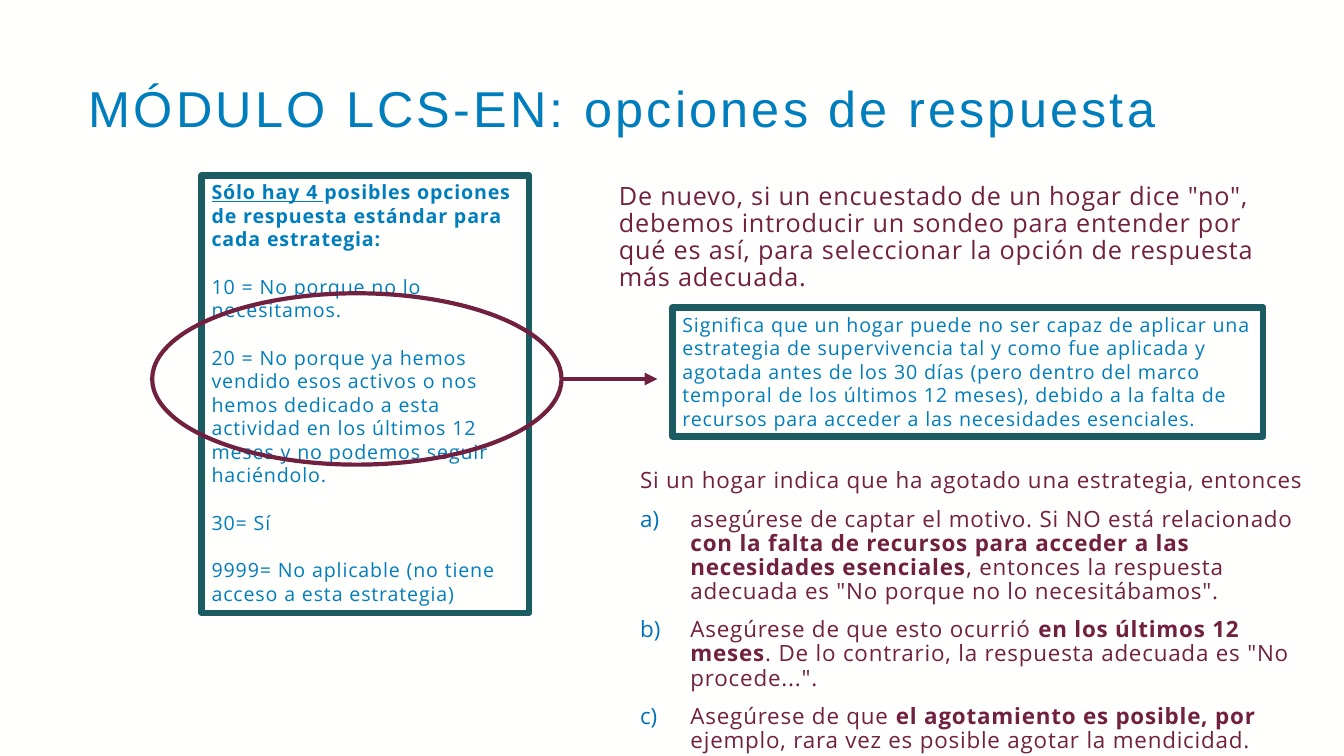
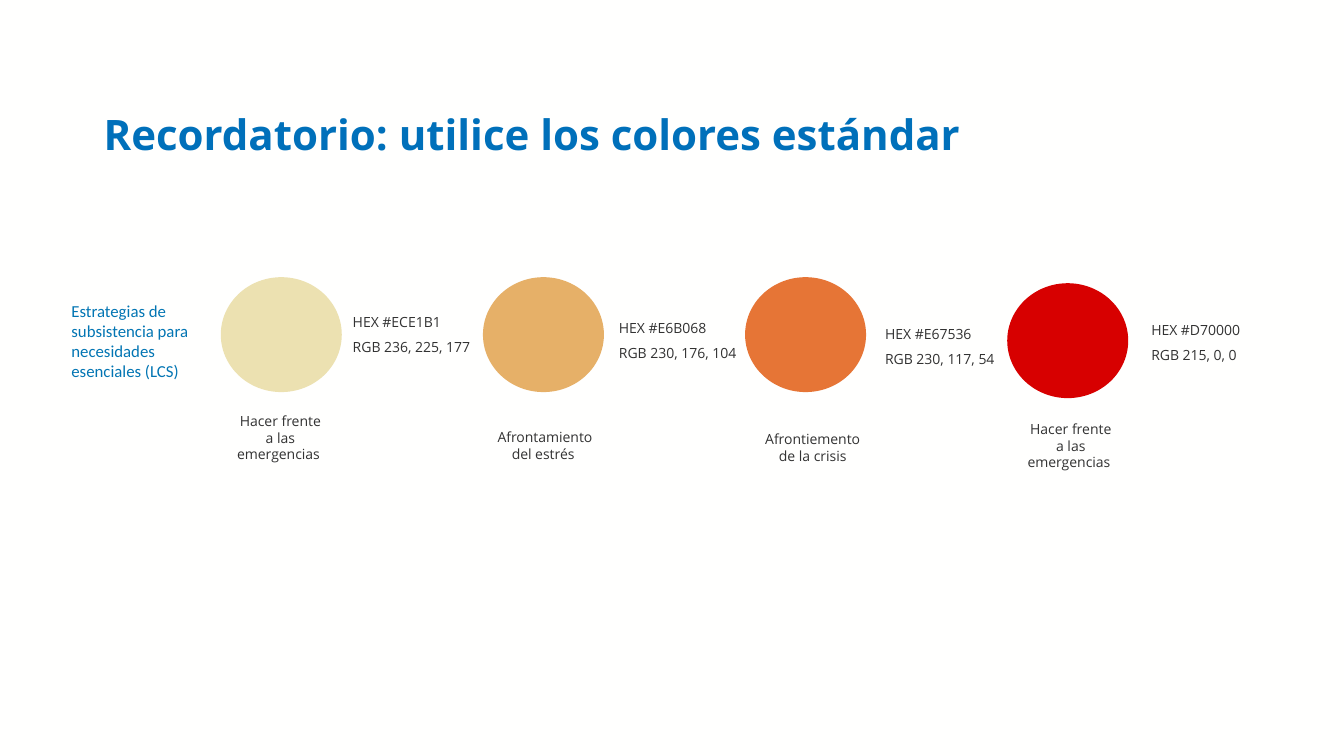
from dataclasses import dataclass, field
from typing import Optional

import lxml.etree
import pptx
import pptx.dml.color
import pptx.enum.shapes
import pptx.enum.text
import pptx.oxml.ns
import pptx.util

Inches = pptx.util.Inches
Pt = pptx.util.Pt
qn = pptx.oxml.ns.qn
ALIGN = pptx.enum.text.PP_ALIGN
ANCHOR = pptx.enum.text.MSO_ANCHOR
SHAPE = pptx.enum.shapes.MSO_SHAPE

BACKGROUND = "FFFFFE"
BLUE = "007DBC"
STRONG_BLUE = "0070BA"
LABEL_BLUE = "0275B3"
TEAL = "1B5B62"
WINE = "722040"
GREY = "323232"
SANS = "Open Sans"


@dataclass(frozen=True)
class Box:
    left: float
    top: float
    width: float
    height: float

    def lengths(self) -> list:
        return [Inches(n) for n in (self.left, self.top, self.width, self.height)]


@dataclass(frozen=True)
class Style:
    """Look of the text in one box; gaps and tracking are in points."""
    size: float
    color: str
    font: str = SANS
    tracking: float = 0
    bold: bool = False
    line_spacing: Optional[float] = None
    before: float = 0
    after: float = 0
    align: ALIGN = ALIGN.LEFT


@dataclass(frozen=True)
class Span:
    text: str
    bold: bool = False
    underline: bool = False


@dataclass(frozen=True)
class Para:
    spans: list = field(default_factory=list)
    lettered: bool = False


@dataclass(frozen=True)
class Swatch:
    """A standard colour with its name and the places of its texts."""
    color: str
    name: str
    circle_top: float
    code_top: float
    name_box: Box


TITLE = Style(36, BLUE, "Arial", tracking=2.3, line_spacing=0.9)
BOLD_TITLE = Style(30, STRONG_BLUE, bold=True, line_spacing=0.9)
OPTIONS = Style(14, BLUE, tracking=0.6, before=17)
INTRODUCTION = Style(18, WINE, tracking=0.6, line_spacing=0.9)
STEPS = Style(16, WINE, tracking=0.6, line_spacing=0.9, before=10)
ROW_LABEL = Style(12, LABEL_BLUE, "Calibri")
CODE = Style(10, GREY, after=6)
NAME = Style(10, GREY, after=6, align=ALIGN.CENTER)

ANSWER_OPTIONS = [
    Para([Span("Sólo hay 4 ", bold=True, underline=True),
          Span("posibles opciones de respuesta estándar para cada estrategia:",
               bold=True)]),
    Para([Span("10 = No porque no lo necesitamos.")]),
    Para([Span("20 = No porque ya hemos vendido esos activos o nos hemos "
               "dedicado a esta actividad en los últimos 12 meses y no "
               "podemos seguir haciéndolo.")]),
    Para([Span("30= Sí")]),
    Para([Span("9999= No aplicable (no tiene acceso a esta estrategia)")]),
]
MEANING = [Para([Span(
    "Significa que un hogar puede no ser capaz de aplicar una estrategia de "
    "supervivencia tal y como fue aplicada y agotada antes de los 30 días "
    "(pero dentro del marco temporal de los últimos 12 meses), debido a la "
    "falta de recursos para acceder a las necesidades esenciales.")])]
PROBING = [Para([Span(
    'De nuevo, si un encuestado de un hogar dice "no", debemos introducir un '
    "sondeo para entender por qué es así, para seleccionar la opción de "
    "respuesta más adecuada.")])]
CHECKS = [
    Para([Span("Si un hogar indica que ha agotado una estrategia, entonces")]),
    Para([Span("asegúrese de captar el motivo. Si NO está relacionado "),
          Span("con la falta de recursos para acceder a las necesidades "
               "esenciales", bold=True),
          Span(', entonces la respuesta adecuada es "No porque no lo '
               'necesitábamos".')], lettered=True),
    Para([Span("Asegúrese de que esto ocurrió "),
          Span("en los últimos 12 meses", bold=True),
          Span('. De lo contrario, la respuesta adecuada es "No procede...".')],
         lettered=True),
    Para([Span("Asegúrese de que "),
          Span("el agotamiento es posible, por ", bold=True),
          Span("ejemplo, rara vez es posible agotar la mendicidad.")],
         lettered=True),
]
SWATCHES = [
    Swatch("ECE1B1", "Hacer frente a las emergencias ", 2.75, 2.69,
           Box(2.24, 3.95, 1.08, 0.78)),
    Swatch("E6B068", "Afrontamiento del estrés ", 2.75, 2.75,
           Box(4.75, 4.03, 1.31, 0.78)),
    Swatch("E67536", "Afrontiemento de la crisis", 2.75, 2.81,
           Box(7.45, 4.05, 1.22, 0.78)),
    Swatch("D70000", "Hacer frente a las emergencias ", 2.81, 2.77,
           Box(10.08, 4.03, 1.08, 0.78)),
]


def rgb(color: str) -> pptx.dml.color.RGBColor:
    return pptx.dml.color.RGBColor.from_string(color)


def add_letter(paragraph) -> None:
    """Number the paragraph a), b), c) with a hanging indent."""
    properties = paragraph._p.get_or_add_pPr()
    indent = Inches(0.5)
    properties.set("marL", str(indent))
    properties.set("indent", str(-indent))
    bullet_color = lxml.etree.SubElement(properties, qn("a:buClr"))
    lxml.etree.SubElement(bullet_color, qn("a:srgbClr"), val=STRONG_BLUE)
    lxml.etree.SubElement(properties, qn("a:buFont"), typeface="+mj-lt")
    lxml.etree.SubElement(properties, qn("a:buAutoNum"), type="alphaLcParenR")


def add_run(paragraph, span: Span, style: Style) -> None:
    run = paragraph.add_run()
    run.text = span.text
    run.font.name = style.font
    run.font.size = Pt(style.size)
    run.font.color.rgb = rgb(style.color)
    run.font.bold = span.bold or style.bold
    run.font.underline = span.underline
    if style.tracking:
        run._r.get_or_add_rPr().set("spc", str(round(style.tracking * 100)))


def write(shape, paragraphs: list[Para], style: Style,
          anchor: ANCHOR = ANCHOR.TOP) -> None:
    frame = shape.text_frame
    frame.word_wrap = True
    frame.vertical_anchor = anchor
    for index, content in enumerate(paragraphs):
        paragraph = frame.add_paragraph() if index else frame.paragraphs[0]
        if content.lettered:
            add_letter(paragraph)
        paragraph.alignment = style.align
        paragraph.line_spacing = style.line_spacing
        paragraph.space_before = Pt(style.before if index else 0)
        paragraph.space_after = Pt(style.after)
        for span in content.spans:
            add_run(paragraph, span, style)


def add_text(slide, box: Box, paragraphs: list[Para], style: Style,
             anchor: ANCHOR = ANCHOR.TOP) -> None:
    write(slide.shapes.add_textbox(*box.lengths()), paragraphs, style, anchor)


def add_figure(slide, kind: SHAPE, box: Box, fill: Optional[str] = None,
               line: Optional[str] = None, line_width: float = 0):
    shape = slide.shapes.add_shape(kind, *box.lengths())
    shape.shadow.inherit = False
    if fill:
        shape.fill.solid()
        shape.fill.fore_color.rgb = rgb(fill)
    else:
        shape.fill.background()
    if line:
        shape.line.color.rgb = rgb(line)
        shape.line.width = Pt(line_width)
    else:
        shape.line.fill.background()
    return shape


def add_panel(slide, box: Box, paragraphs: list[Para]) -> None:
    panel = add_figure(slide, SHAPE.RECTANGLE, box, line=TEAL, line_width=4.5)
    write(panel, paragraphs, OPTIONS)


def add_arrow(slide, left: float, right: float, y: float) -> None:
    arrow = slide.shapes.add_connector(
        pptx.enum.shapes.MSO_CONNECTOR.STRAIGHT,
        Inches(left), Inches(y), Inches(right), Inches(y))
    arrow.line.color.rgb = rgb(WINE)
    arrow.line.width = Pt(3)
    lxml.etree.SubElement(arrow.line._get_or_add_ln(), qn("a:tailEnd"),
                          type="triangle")
    lxml.etree.SubElement(arrow._element.spPr, qn("a:effectLst"))


def add_swatch(slide, index: int, swatch: Swatch) -> None:
    circle = Box(2.19 + 2.6 * index, swatch.circle_top, 1.2, 1.14)
    code = Box(3.4 + 2.64 * index, swatch.code_top, 1.39, 1.26)
    red, green, blue = rgb(swatch.color)
    add_figure(slide, SHAPE.OVAL, circle, fill=swatch.color)
    add_text(slide, code,
             [Para([Span(f"HEX #{swatch.color}")]),
              Para([Span(f"RGB {red}, {green}, {blue}")])],
             CODE, ANCHOR.MIDDLE)
    add_text(slide, swatch.name_box, [Para([Span(swatch.name)])], NAME,
             ANCHOR.MIDDLE)


def build_options_slide(slide) -> None:
    add_text(slide, Box(0.78, 0.78, 12.09, 0.72),
             [Para([Span("MÓDULO LCS-EN: opciones de respuesta")])], TITLE)
    add_panel(slide, Box(2, 1.74, 3.25, 4.34), ANSWER_OPTIONS)
    add_panel(slide, Box(6.67, 3.05, 5.86, 1.28), MEANING)
    highlight = Box(1.51, 2.91, 4.06, 1.7)
    add_figure(slide, SHAPE.OVAL, highlight, line=WINE, line_width=3)
    add_arrow(slide, highlight.left + highlight.width, 6.52,
              highlight.top + highlight.height / 2)
    add_text(slide, Box(6.04, 1.77, 6.67, 0.92), PROBING, INTRODUCTION)
    add_text(slide, Box(6.25, 4.61, 6.91, 2.95), CHECKS, STEPS)


def build_colors_slide(slide) -> None:
    add_text(slide, Box(0.93, 0.73, 11.53, 1.26),
             [Para([Span("Recordatorio: utilice los colores estándar")])],
             BOLD_TITLE, ANCHOR.MIDDLE)
    add_text(slide, Box(0.61, 2.75, 1.61, 1.26),
             [Para([Span("Estrategias de subsistencia para necesidades "
                         "esenciales (LCS)")])],
             ROW_LABEL, ANCHOR.MIDDLE)
    for index, swatch in enumerate(SWATCHES):
        add_swatch(slide, index, swatch)


def main() -> None:
    presentation = pptx.Presentation()
    presentation.slide_width = Inches(13.33)
    presentation.slide_height = Inches(7.5)
    background = presentation.slide_master.background.fill
    background.solid()
    background.fore_color.rgb = rgb(BACKGROUND)
    blank = presentation.slide_layouts[6]
    for build in (build_options_slide, build_colors_slide):
        build(presentation.slides.add_slide(blank))
    presentation.save("out.pptx")


if __name__ == "__main__":
    main()
